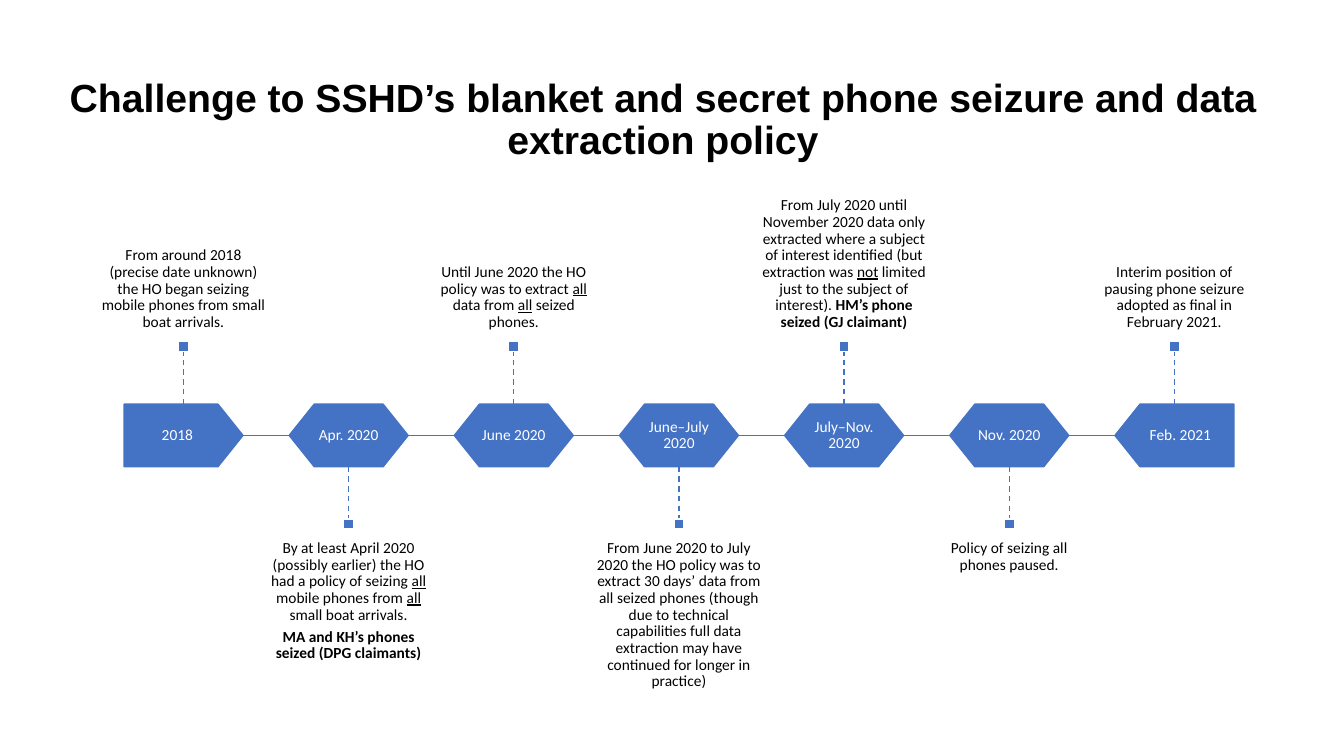
import pptx
import pptx.util
import pptx.dml.color
import pptx.enum.dml
import pptx.enum.shapes
import pptx.enum.text
import lxml.etree
from dataclasses import dataclass

TITLE = "Challenge to SSHD’s blanket and secret phone seizure and data extraction policy"

EVENTS = [
    ("2018", [[("From around 2018 (precise date unknown) the HO began seizing mobile phones from small boat arrivals.", "")]]),
    ("Apr. 2020", [
        [("By at least April 2020 (possibly earlier) the HO had a policy of seizing ", ""),
         ("all", "u"), (" mobile phones from ", ""), ("all", "u"), (" small boat arrivals.", "")],
        [("MA and KH’s phones seized (DPG claimants)", "b")],
    ]),
    ("June 2020", [
        [("Until June 2020 the HO policy was to extract ", ""), ("all ", "u"),
         ("data from ", ""), ("all", "u"), (" seized phones.", "")],
    ]),
    ("June–July 2020", [
        [("From June 2020 to July 2020 the HO policy was to extract 30 days’ data from all seized phones "
          "(though due to technical capabilities full data extraction may have continued for longer in practice)", "")],
    ]),
    ("July–Nov. 2020", [
        [("From July 2020 until November 2020 data only extracted where a subject of interest identified "
          "(but extraction was ", ""), ("not", "u"),
         (" limited just to the subject of interest). ", ""), ("HM’s phone seized (GJ claimant)", "b")],
    ]),
    ("Nov. 2020", [[("Policy of seizing all phones paused.", "")]]),
    ("Feb. 2021", [[("Interim position of pausing phone seizure adopted as final in February 2021.", "")]]),
]


@dataclass(frozen=True)
class Theme:
    blue: str = "4472C4"
    white: str = "FFFFFF"
    black: str = "000000"
    head: str = "Arial"
    body: str = "Calibri"
    big: int = 28
    small: int = 11
    line: int = 1
    lead: float = 0.9
    after: float = 3.85


LOOK = Theme()
INCH = pptx.util.Inches
KIND = pptx.enum.shapes.MSO_SHAPE
ANCHOR = pptx.enum.text.MSO_ANCHOR

LEFT, PITCH = 1.23, 1.638
WIDE, HIGH = 1.18, 0.62
TOP, MID = 4.01, 4.32
STEM, DOT = 0.52, 0.1
NOTE_W, NOTE_H = 1.64, 1.65


def tint(code):
    return pptx.dml.color.RGBColor.from_string(code)


def write(frame, paras, face, size, color, anchor, pads=None, after=0):
    frame.word_wrap = True
    frame.auto_size = pptx.enum.text.MSO_AUTO_SIZE.NONE
    frame.vertical_anchor = anchor
    if pads:
        side, edge = map(INCH, pads)
        frame.margin_left = frame.margin_right = side
        frame.margin_top = frame.margin_bottom = edge
    for i, runs in enumerate(paras):
        para = frame.add_paragraph() if i else frame.paragraphs[0]
        para.alignment = pptx.enum.text.PP_ALIGN.CENTER
        para.line_spacing = LOOK.lead
        para.space_before = pptx.util.Pt(0)
        para.space_after = pptx.util.Pt(after)
        for text, style in runs:
            run = para.add_run()
            run.text = text
            run.font.name = face
            run.font.size = pptx.util.Pt(size)
            run.font.color.rgb = tint(color)
            run.font.bold = style == "b"
            run.font.underline = style == "u"


def label(slide, box, paras, color, anchor, pads):
    text = slide.shapes.add_textbox(*map(INCH, box))
    write(text.text_frame, paras, LOOK.body, LOOK.small, color, anchor, pads, LOOK.after)


def block(slide, kind, box, edge):
    shape = slide.shapes.add_shape(kind, *map(INCH, box))
    shape.shadow.inherit = False
    shape.fill.solid()
    shape.fill.fore_color.rgb = tint(LOOK.blue)
    shape.line.color.rgb = tint(edge)
    shape.line.width = pptx.util.Pt(LOOK.line)
    return shape


def join(slide, ends, dash=False):
    line = slide.shapes.add_connector(pptx.enum.shapes.MSO_CONNECTOR.STRAIGHT, *map(INCH, ends))
    line.line.color.rgb = tint(LOOK.blue)
    line.line.width = pptx.util.Pt(LOOK.line)
    if dash:
        line.line.dash_style = pptx.enum.dml.MSO_LINE.DASH
    lxml.etree.SubElement(line._element.spPr, pptx.oxml.ns.qn("a:effectLst"))


def event(slide, i, date, note):
    last = len(EVENTS) - 1
    x = LEFT + i * PITCH
    mid = x + WIDE / 2
    end = i in (0, last)

    if i < last:
        join(slide, (x + WIDE, MID, x + PITCH, MID))
    kind = KIND.PENTAGON if end else KIND.HEXAGON
    shape = block(slide, kind, (x, TOP, WIDE, HIGH), LOOK.blue)
    shape.adjustments[0] = 0.4
    if i == last:
        shape.rotation = 180

    if end:
        box = (x + (0.12 if i else 0), TOP, WIDE - 0.12, HIGH)
    else:
        box = (x + 0.18, TOP + 0.09, WIDE - 0.36, HIGH - 0.18)
    label(slide, box, [[(date, "")]], LOOK.white, ANCHOR.MIDDLE, (0.09, 0.09))

    if i % 2:
        near = TOP + HIGH
        far = near + STEM
        dot, y, anchor = far, far + DOT, ANCHOR.TOP
    else:
        near, far = TOP, TOP - STEM
        dot, y, anchor = far - DOT, far - DOT - NOTE_H, ANCHOR.BOTTOM
    join(slide, (mid, near, mid, far), True)
    block(slide, KIND.RECTANGLE, (mid - DOT / 2, dot, DOT, DOT), LOOK.white)
    label(slide, (mid - NOTE_W / 2, y, NOTE_W, NOTE_H), note, LOOK.black, anchor, (0, 0.11))


def main():
    deck = pptx.Presentation()
    deck.slide_width, deck.slide_height = INCH(13.33), INCH(7.5)
    slide = deck.slides.add_slide(deck.slide_layouts[5])
    title = slide.shapes.title
    title.left, title.top, title.width, title.height = map(INCH, (0.49, 0.4, 12.17, 1.6))
    write(title.text_frame, [[(TITLE, "b")]], LOOK.head, LOOK.big, LOOK.black, ANCHOR.MIDDLE)
    for i, (date, note) in enumerate(EVENTS):
        event(slide, i, date, note)
    deck.save("out.pptx")


if __name__ == "__main__":
    main()
